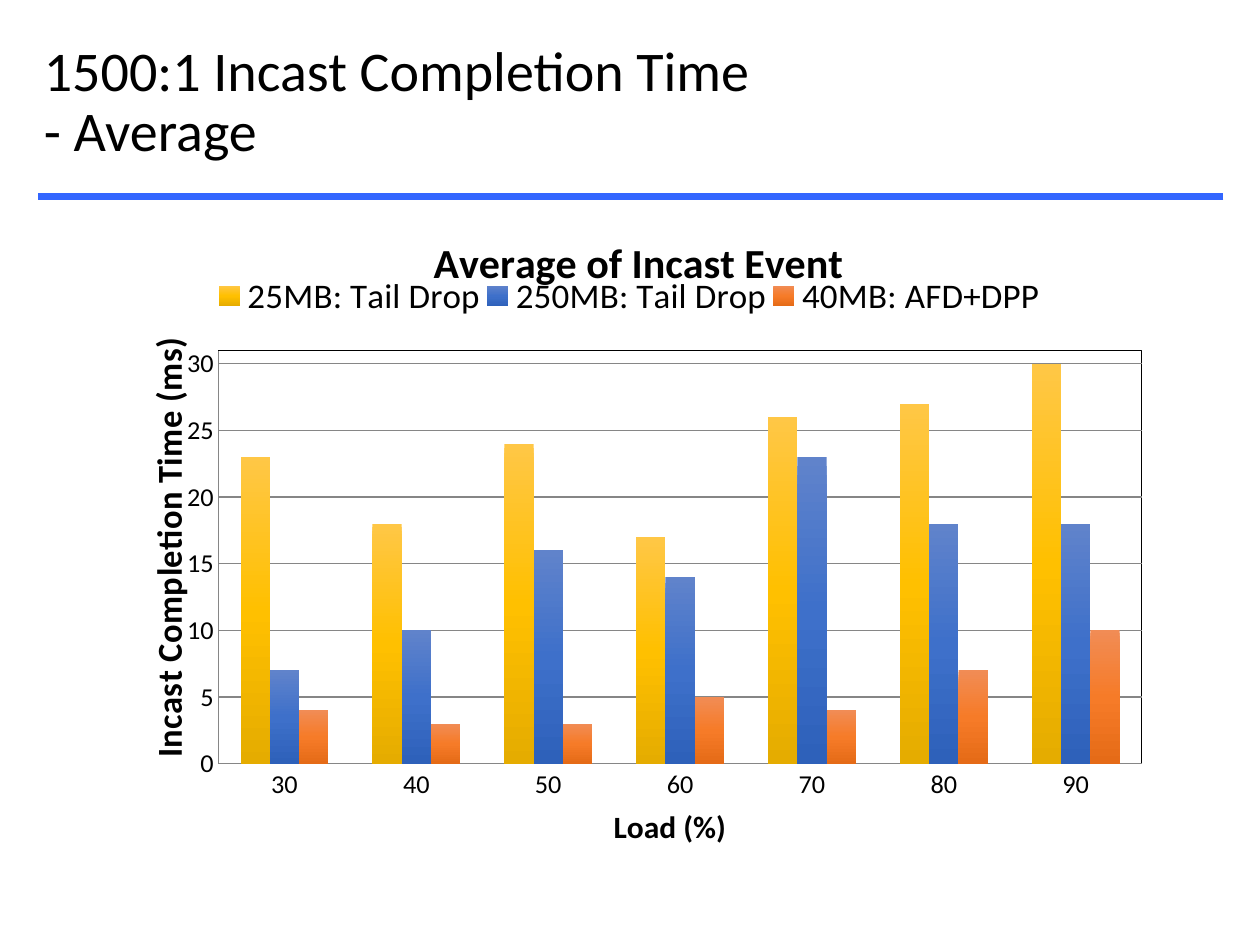
from copy import deepcopy
from lxml.etree import SubElement
from pptx import Presentation
from pptx.chart.data import CategoryChartData
from pptx.dml.color import RGBColor
from pptx.enum.chart import XL_CHART_TYPE, XL_LEGEND_POSITION, XL_TICK_MARK
from pptx.enum.shapes import MSO_CONNECTOR
from pptx.enum.text import MSO_ANCHOR
from pptx.oxml import parse_xml
from pptx.oxml.ns import nsdecls, qn
from pptx.util import Inches, Pt


def style(font, **form):
    base = dict(name="Calibri", bold=False)
    for key, val in (base | form).items():
        setattr(font, key, val)
    font.color.rgb = RGBColor.from_string("000000")


def place(part, **spots):
    """Give a chart part a manual layout, in shares of the chart."""
    old = part.find(qn("c:layout"))
    if old is not None:
        part.remove(old)
    box = parse_xml(f"<c:layout {nsdecls('c')}><c:manualLayout/></c:layout>")
    for tag, val in spots.items():
        SubElement(box[0], qn("c:" + tag)).set("val", str(val))
    over = part.find(qn("c:overlay"))
    part.insert(0 if over is None else part.index(over), box)


deck = Presentation()
deck.slide_width, deck.slide_height = Inches(10), Inches(7.5)
slide = deck.slides.add_slide(deck.slide_layouts[6])

# Rule under the title
rule = slide.shapes.add_connector(
    MSO_CONNECTOR.STRAIGHT, Inches(9.71), Inches(1.56), Inches(0.3), Inches(1.56))
rule.line.color.rgb = RGBColor.from_string("3366FF")
rule.line.width = Pt(4)
SubElement(rule._element.spPr, qn("a:effectLst"))

# Title
head = slide.shapes.add_textbox(
    Inches(0.25), Inches(0.36), Inches(9.39), Inches(0.92)).text_frame
head.word_wrap = True
head.vertical_anchor = MSO_ANCHOR.MIDDLE
line = head.paragraphs[0]
line.text = "1500:1 Incast Completion Time\v- Average"
line.line_spacing = 0.9
for run in line.runs:
    style(run.font, size=Pt(32))

# Chart data: name, values, gradient from top to bottom
rows = [
    ("25MB: Tail Drop", (23, 18, 24, 17, 26, 27, 30),
     ("FFC746", "FFC000", "E5AC00")),
    ("250MB: Tail Drop", (7, 10, 16, 14, 23, 18, 18),
     ("6083CB", "3E70CA", "2E61BA")),
    ("40MB: AFD+DPP", (4, 3, 3, 5, 4, 7, 10),
     ("F18C55", "F67B28", "E56B17")),
]
data = CategoryChartData()
data.categories = range(30, 100, 10)
for name, vals, _ in rows:
    data.add_series(name, vals)
chart = slide.shapes.add_chart(
    XL_CHART_TYPE.COLUMN_CLUSTERED, Inches(0.75), Inches(1.55),
    Inches(8.49), Inches(5.24), data).chart
style(chart.font, size=Pt(10))

# Columns
plot = chart.plots[0]
plot.gap_width, plot.overlap, plot.vary_by_categories = 150, 0, False
for bar, (_, _, tones) in zip(plot.series, rows):
    fill = bar.format.fill
    fill.gradient()
    fill.gradient_angle = 270
    stops = bar._element.find(".//" + qn("a:gsLst"))
    stops.append(deepcopy(stops[-1]))
    for stop, tone, pos in zip(fill.gradient_stops, tones, (0, 0.5, 1)):
        stop.color.rgb = RGBColor.from_string(tone)
        stop.position = pos

# Titles
for part, text, size, x, y in [
        (chart, "Average of Incast Event", 24, 0.31, 0.05),
        (chart.category_axis, "Load (%)", 18, 0.48, 0.93),
        (chart.value_axis, "Incast Completion Time (ms)", 20, 0.04, 0.22)]:
    name = part.chart_title if part is chart else part.axis_title
    name.text_frame.text = text
    style(name.text_frame.paragraphs[0].runs[0].font, size=Pt(size), bold=True)
    place(name._element, xMode="edge", yMode="edge", x=x, y=y)

# Axes
axis = chart.value_axis
form = dict(minimum_scale=0, maximum_scale=31, major_unit=5,
            has_major_gridlines=True)
for key, val in form.items():
    setattr(axis, key, val)
for side in (chart.category_axis, axis):
    side.major_tick_mark = side.minor_tick_mark = XL_TICK_MARK.NONE
    side.tick_labels.number_format = "0"
    side.tick_labels.number_format_is_linked = False
    style(side.tick_labels.font, size=Pt(15))
for item in (chart.category_axis, axis, axis.major_gridlines):
    item.format.line.color.rgb = RGBColor.from_string("868686")
    item.format.line.width = Pt(0.75)

# Legend
chart.has_legend = True
key = chart.legend
key.position = XL_LEGEND_POSITION.TOP
key.include_in_layout = False
style(key.font, size=Pt(20))
place(key._element, xMode="edge", yMode="edge", x=0.11, y=0.11, w=0.78, h=0.09)

# Plot area with a thin frame
area = chart._chartSpace.find(".//" + qn("c:plotArea"))
place(area, layoutTarget="inner", xMode="edge", yMode="edge",
      x=0.116, y=0.239, w=0.863, h=0.636)
area.append(parse_xml(
    f"<c:spPr {nsdecls('c', 'a')}><a:noFill/><a:ln w='9525'><a:solidFill>"
    "<a:srgbClr val='000000'/></a:solidFill></a:ln></c:spPr>"))

deck.save("out.pptx")
